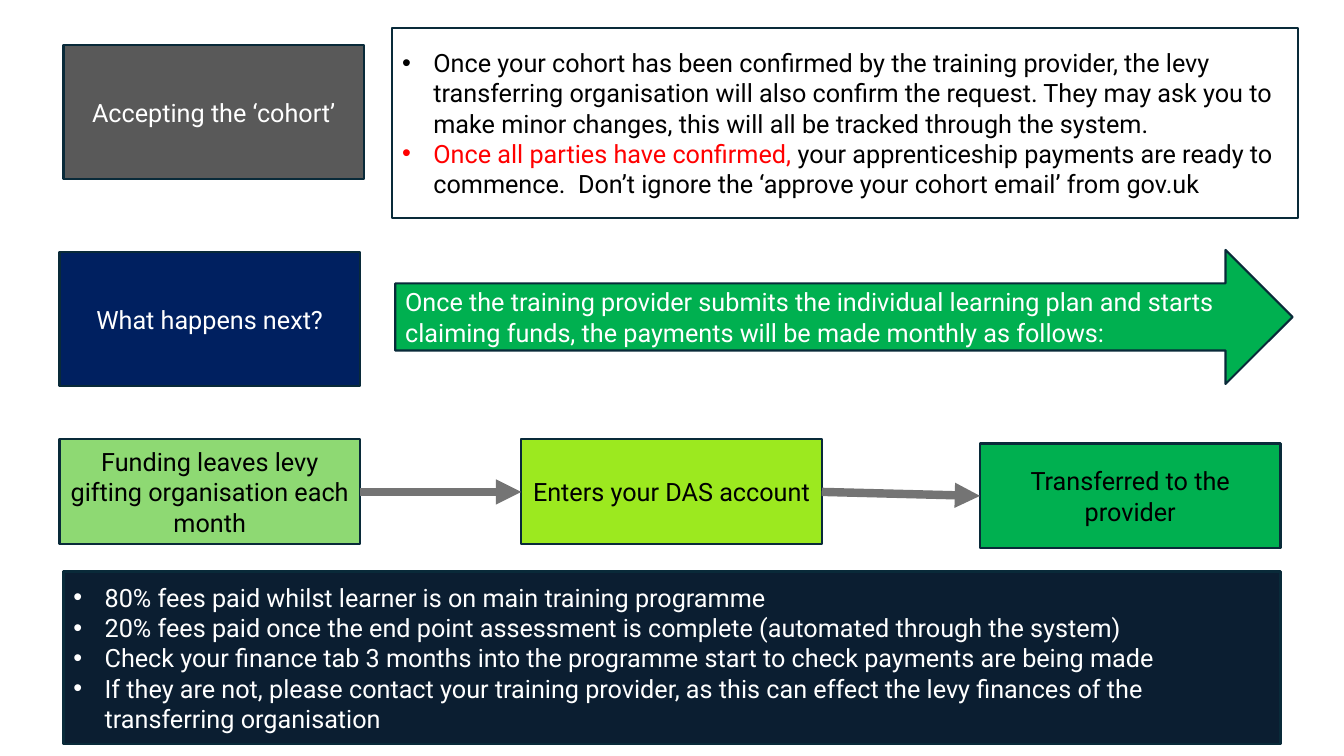
from lxml.etree import SubElement
from pptx import Presentation
from pptx.dml.color import RGBColor
from pptx.enum.shapes import MSO_CONNECTOR, MSO_SHAPE
from pptx.enum.text import MSO_ANCHOR, PP_ALIGN
from pptx.oxml.ns import qn
from pptx.util import Inches, Pt

COLORS = {
    "outline": "092A39", "grey": "595959", "navy": "002060", "night": "0B1E31",
    "green": "00B050", "lime": "9CE91F", "mint": "8ED973", "link": "747474",
    "white": "FFFFFF", "black": "000000", "red": "FF0000",
}
FONT = {"name": "Roboto", "size": Pt(18)}
BULLET_INDENT = Inches(0.31)
LEFT, LABEL_WIDTH, LABEL_HEIGHT, STEP_HEIGHT = 0.59, 2.98, 1.33, 1.04

COHORT_NOTES = [
    [("Once your cohort has been confirmed by the training provider, the levy "
      "transferring organisation will also confirm the request. They may ask you to "
      "make minor changes, this will all be tracked through the system.", "black")],
    [("Once all parties have confirmed,", "red"),
     (" your apprenticeship payments are ready to commence.  Don’t ignore the "
      "‘approve your cohort email’ from gov.uk", "black")],
]
NEXT_TEXT = ("Once the training provider submits the individual learning plan and starts "
             "claiming funds, the payments will be made monthly as follows:")
STEPS = [
    (LEFT, 4.36, "Funding leaves levy gifting organisation each month", "mint"),
    (5.17, 4.36, "Enters your DAS account", "lime"),
    (9.72, 4.4, "Transferred to the provider", "green"),
]
FEE_NOTES = [
    "80% fees paid whilst learner is on main training programme",
    "20% fees paid once the end point assessment is complete (automated through the system)",
    "Check your finance tab 3 months into the programme start to check payments are being made",
    "If they are not, please contact your training provider, as this can effect the levy "
    "finances of the transferring organisation",
]


def rgb(name):
    return RGBColor.from_string(COLORS[name])


def add_bullet(paragraph):
    properties = paragraph._p.get_or_add_pPr()
    properties.set("marL", str(BULLET_INDENT))
    properties.set("indent", str(-BULLET_INDENT))
    SubElement(properties, qn("a:buFont")).set("typeface", "Arial")
    SubElement(properties, qn("a:buChar")).set("char", "•")


def add_panel(slide, box, paragraphs, fill=None, kind=MSO_SHAPE.FLOWCHART_PROCESS,
              align=PP_ALIGN.LEFT, bullets=False):
    shape = slide.shapes.add_shape(kind, *map(Inches, box))
    shape.shadow.inherit = False
    if fill:
        shape.fill.solid()
        shape.fill.fore_color.rgb = rgb(fill)
    else:
        shape.fill.background()
    shape.line.color.rgb = rgb("outline")
    shape.line.width = Pt(1.5)
    frame = shape.text_frame
    frame.word_wrap = True
    frame.vertical_anchor = MSO_ANCHOR.MIDDLE
    for index, runs in enumerate(paragraphs):
        paragraph = frame.add_paragraph() if index else frame.paragraphs[0]
        paragraph.alignment = align
        if bullets:
            add_bullet(paragraph)
        for text, color in runs:
            run = paragraph.add_run()
            run.text = text
            for key, value in FONT.items():
                setattr(run.font, key, value)
            run.font.color.rgb = rgb(color)
    return shape


def add_label(slide, box, text, fill, color):
    return add_panel(slide, box, [[(text, color)]], fill, align=PP_ALIGN.CENTER)


def add_link(slide, start, end):
    connector = slide.shapes.add_connector(MSO_CONNECTOR.STRAIGHT, 0, 0, 0, 0)
    connector.begin_connect(start, 3)
    connector.end_connect(end, 1)
    connector.line.color.rgb = rgb("link")
    connector.line.width = Pt(6)
    SubElement(connector.line._get_or_add_ln(), qn("a:tailEnd")).set("type", "triangle")
    SubElement(connector._element.spPr, qn("a:effectLst"))


def add_cohort(slide, left, top, width):
    add_label(slide, (left, top + 0.17, LABEL_WIDTH, LABEL_HEIGHT),
              "Accepting the ‘cohort’", "grey", "white")
    offset = 3.26
    add_panel(slide, (left + offset, top, width - offset, 1.88), COHORT_NOTES, bullets=True)


def add_next(slide, left, top, width):
    add_label(slide, (left, top + 0.02, LABEL_WIDTH, LABEL_HEIGHT),
              "What happens next?", "navy", "white")
    offset = 3.33
    add_panel(slide, (left + offset, top, width - offset, LABEL_HEIGHT),
              [[(NEXT_TEXT, "white")]], "green", MSO_SHAPE.RIGHT_ARROW)


def add_steps(slide):
    boxes = [add_label(slide, (left, top, LABEL_WIDTH, STEP_HEIGHT), text, fill, "black")
             for left, top, text, fill in STEPS]
    for start, end in zip(boxes, boxes[1:]):
        add_link(slide, start, end)


def add_fees(slide, box):
    add_panel(slide, box, [[(note, "white")] for note in FEE_NOTES], "night", bullets=True)


def main():
    presentation = Presentation()
    presentation.slide_width = Inches(13.33)
    presentation.slide_height = Inches(7.5)
    slide = presentation.slides.add_slide(presentation.slide_layouts[6])
    add_cohort(slide, 0.63, 0.28, 12.24)
    add_next(slide, LEFT, 2.48, 12.23)
    add_steps(slide)
    add_fees(slide, (0.63, 5.67, 12.07, 1.71))
    presentation.save("out.pptx")


if __name__ == "__main__":
    main()
